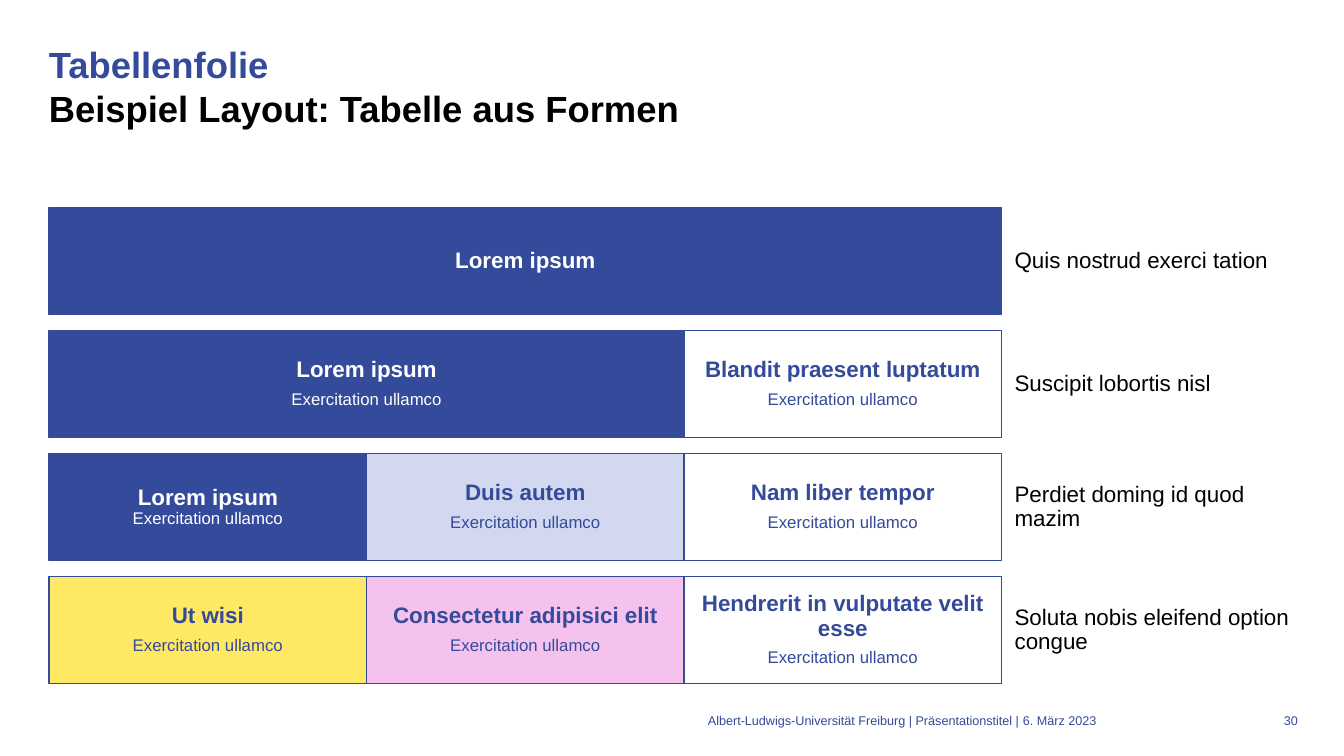
"""Build the slide that shows a table made of rectangles."""
from pptx import Presentation
from pptx.dml.color import RGBColor
from pptx.enum.shapes import MSO_SHAPE as Shape
from pptx.enum.text import MSO_ANCHOR as Anchor, MSO_AUTO_SIZE as AutoSize, PP_ALIGN as Align
from pptx.util import Cm, Pt

BLUE = RGBColor(0x34, 0x4A, 0x9A)
PALE_BLUE = RGBColor(0xD2, 0xD8, 0xF0)
YELLOW = RGBColor(0xFF, 0xE8, 0x63)
PINK = RGBColor(0xF5, 0xC2, 0xED)
WHITE = RGBColor(0xFF, 0xFF, 0xFF)
BLACK = RGBColor(0, 0, 0)
FONT = "Arial"

TITLE = [("Tabellenfolie", BLUE), ("Beispiel Layout: Tabelle aus Formen", BLACK)]
SUB = "Exercitation ullamco"
ROWS = [
    ("Quis nostrud exerci tation", [(3, BLUE, ["Lorem ipsum"])]),
    ("Suscipit lobortis nisl", [
        (2, BLUE, ["Lorem ipsum", SUB]),
        (1, WHITE, ["Blandit praesent luptatum", SUB])]),
    ("Perdiet doming id quod mazim", [
        (1, BLUE, [f"Lorem ipsum\n{SUB}"]),
        (1, PALE_BLUE, ["Duis autem", SUB]),
        (1, WHITE, ["Nam liber tempor", SUB])]),
    ("Soluta nobis eleifend option congue", [
        (1, YELLOW, ["Ut wisi", SUB]),
        (1, PINK, ["Consectetur adipisici elit", SUB]),
        (1, WHITE, ["Hendrerit in vulputate velit esse", SUB])]),
]
FOOTER = [
    (8.28, 17.4, 0, Align.RIGHT, "Albert-Ludwigs-Universität Freiburg | Präsentationstitel |"),
    (25.68, 3.99, 0.1, Align.LEFT, "6. März 2023"),
    (31.72, 0.99, 0, Align.RIGHT, "30"),
]

GRID_LEFT, GRID_TOP = 1.24, 5.23
COLUMN_WIDTH, ROW_HEIGHT, ROW_PITCH = 8, 2.69, 3.1
NOTE_LEFT, NOTE_WIDTH = 25.39, 7.33
CELL_INSET = 0.18


def set_font(font, size, color, bold=False):
    """Apply the slide's typeface with a size, colour and weight."""
    font.name, font.size, font.bold = FONT, Pt(size), bold
    font.color.rgb = color


def set_insets(frame, left, others):
    """Set the text margins and turn on wrapping."""
    frame.word_wrap = True
    frame.margin_left = Cm(left)
    frame.margin_top = frame.margin_right = frame.margin_bottom = Cm(others)


def add_cell(page, left, top, width, fill, lines, align, color, bold, outline=None):
    """Add one rectangle whose first line is a heading."""
    cell = page.shapes.add_shape(
        Shape.RECTANGLE, Cm(left), Cm(top), Cm(width), Cm(ROW_HEIGHT))
    cell.shadow.inherit = False
    cell.fill.solid()
    cell.fill.fore_color.rgb = fill
    if outline is None:
        cell.line.fill.background()
    else:
        cell.line.color.rgb = outline
        cell.line.width = Pt(1)
    frame = cell.text_frame
    set_insets(frame, CELL_INSET, CELL_INSET)
    frame.vertical_anchor = Anchor.MIDDLE
    for index, line in enumerate(lines):
        para = frame.paragraphs[0] if index == 0 else frame.add_paragraph()
        para.alignment, para.line_spacing, para.space_after = align, 0.9, Pt(6)
        parts = line.split("\n")
        if len(parts) == 1:
            para.text = line
            set_font(para.font, 12 if index else 16, color, bold and index == 0)
            continue
        for number, part in enumerate(parts):
            if number:
                para.add_line_break()
            span = para.add_run()
            span.text = part
            set_font(span.font, 12 if number else 16, color, bold and number == 0)


def add_title(page):
    """Fill the title placeholder with two coloured lines."""
    title = page.shapes.title
    title.left, title.top, title.width, title.height = Cm(1.23), Cm(1.02), Cm(31.5), Cm(3.68)
    frame = title.text_frame
    set_insets(frame, 0, 0)
    frame.auto_size = AutoSize.NONE
    frame.vertical_anchor = Anchor.TOP
    para = frame.paragraphs[0]
    para.alignment, para.line_spacing = Align.LEFT, Pt(32)
    for index, (text, color) in enumerate(TITLE):
        if index:
            para.add_line_break()
        span = para.add_run()
        span.text = text
        set_font(span.font, 26, color, True)


def add_table_rows(page):
    """Lay out the cells by column span, with a note beside each row."""
    for index, (note, cells) in enumerate(ROWS):
        top = GRID_TOP + index * ROW_PITCH
        left = GRID_LEFT
        for columns, fill, lines in cells:
            width = columns * COLUMN_WIDTH
            color = WHITE if fill == BLUE else BLUE
            add_cell(page, left, top, width, fill, lines, Align.CENTER, color, True, BLUE)
            left += width
        add_cell(page, NOTE_LEFT, top, NOTE_WIDTH, WHITE, [note], Align.LEFT, BLACK, False)


def add_footer(page):
    """Add the footer texts along the bottom edge."""
    for left, width, inset, align, text in FOOTER:
        box = page.shapes.add_textbox(Cm(left), Cm(17.96), Cm(width), Cm(0.51))
        set_insets(box.text_frame, inset, 0)
        para = box.text_frame.paragraphs[0]
        para.text = text
        para.alignment = align
        set_font(para.font, 9, BLUE)


def main():
    """Create the deck and save it."""
    deck = Presentation()
    deck.slide_width, deck.slide_height = Cm(33.87), Cm(19.05)
    page = deck.slides.add_slide(deck.slide_layouts[5])
    add_title(page)
    add_table_rows(page)
    add_footer(page)
    deck.save("out.pptx")


if __name__ == "__main__":
    main()
